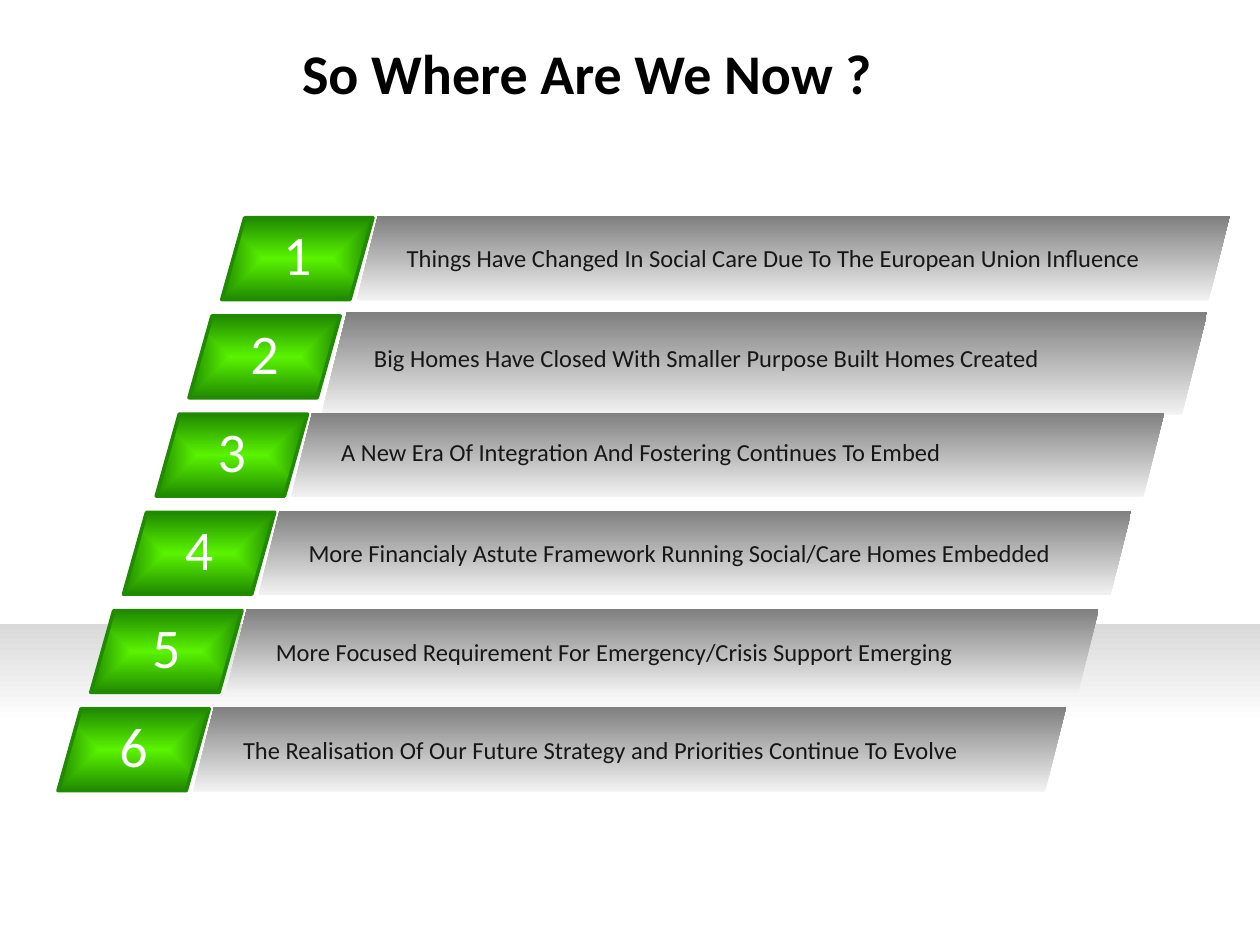
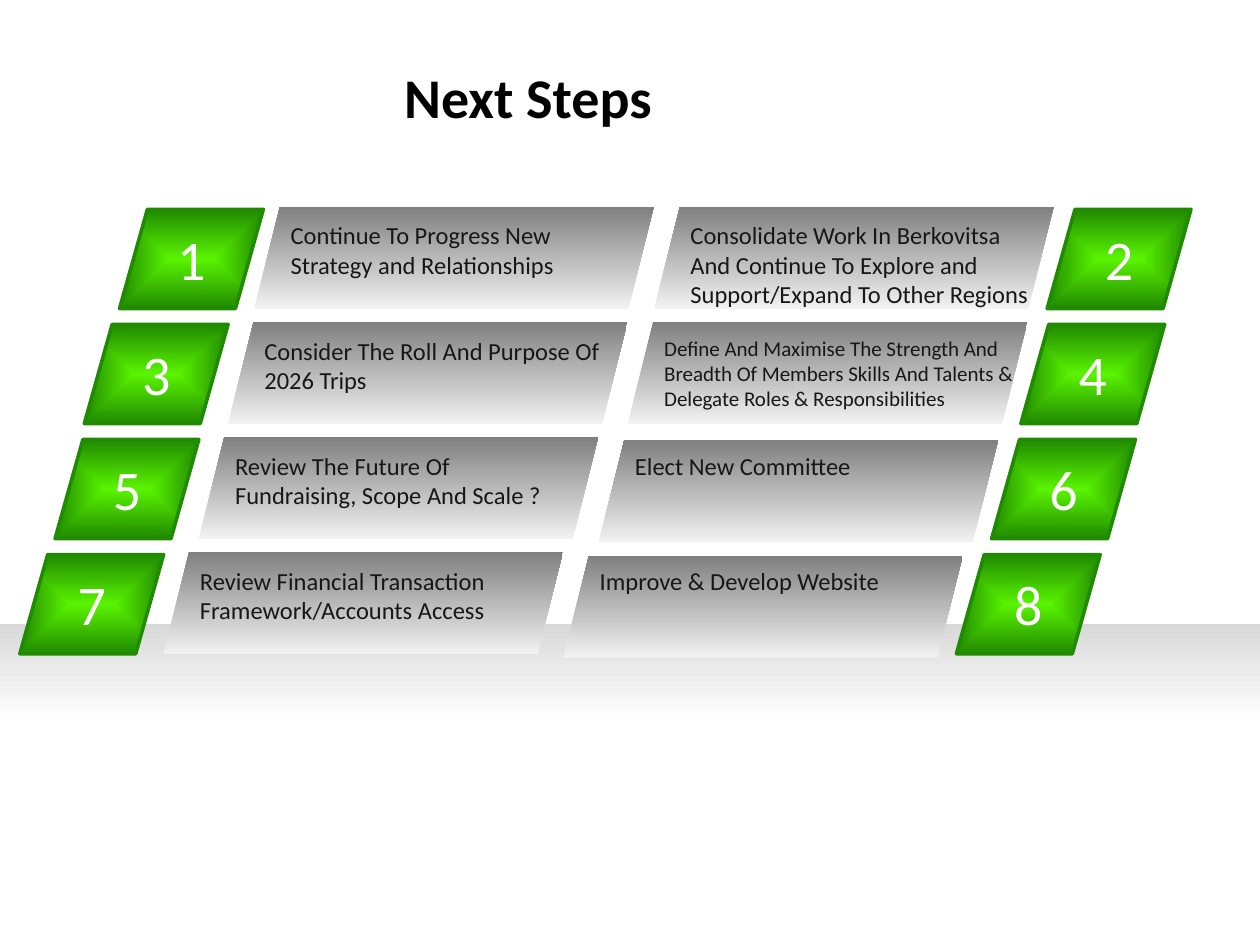
from dataclasses import dataclass

from lxml import etree
from pptx import Presentation
from pptx.dml.color import RGBColor
from pptx.enum.shapes import MSO_SHAPE
from pptx.enum.text import MSO_AUTO_SIZE, PP_ALIGN
from pptx.oxml.ns import qn
from pptx.util import Cm, Pt

RECTANGLE = MSO_SHAPE.RECTANGLE
PARALLELOGRAM = MSO_SHAPE.PARALLELOGRAM
GROW = MSO_AUTO_SIZE.SHAPE_TO_FIT_TEXT
LEFT, CENTER = PP_ALIGN.LEFT, PP_ALIGN.CENTER


@dataclass(frozen=True)
class Theme:
    font: str = "Calibri"
    title_size: int = 32
    body_size: int = 14
    small_size: int = 12
    black: str = "000000"
    white: str = "FFFFFF"
    ink: str = "171717"
    bar_light: str = "F2F2F2"
    bar_dark: str = "808080"
    band: str = "D9D9D9"
    green_light: str = "5AF300"
    green_dark: str = "208A00"


THEME = Theme()


class Deck:
    """Holds the style and the current slide; all lengths are centimetres."""

    def __init__(self, theme):
        self.theme = theme
        self.presentation = Presentation()
        self.presentation.slide_width = Cm(25.4)
        self.presentation.slide_height = Cm(19.05)
        self.slide = None

    def add_slide(self):
        layout = self.presentation.slide_layouts[6]
        self.slide = self.presentation.slides.add_slide(layout)
        band = self.add_shape(self.slide.shapes, RECTANGLE, 0, 12.57, 25.4, 5.13)
        self.fill_gradient(band, self.theme.white, self.theme.band, start=0.61)

    def add_shape(self, shapes, kind, left, top, width, height):
        shape = shapes.add_shape(kind, Cm(left), Cm(top), Cm(width), Cm(height))
        shape.shadow.inherit = False
        shape.line.fill.background()
        return shape

    def fill_gradient(self, shape, first, last, start=0):
        """Vertical gradient that runs from the bottom up."""
        shape.fill.gradient()
        shape.fill.gradient_angle = 90
        stops = shape.fill.gradient_stops
        for stop, color, position in zip(stops, (first, last), (start, 1)):
            stop.color.rgb = RGBColor.from_string(color)
            stop.position = position

    def fill_from_centre(self, shape, inner, outer):
        self.fill_gradient(shape, inner, outer)
        gradient = shape._element.spPr.find(qn("a:gradFill"))
        gradient.remove(gradient.find(qn("a:lin")))
        route = etree.SubElement(gradient, qn("a:path"), {"path": "shape"})
        sides = dict.fromkeys("ltrb", "50000")
        etree.SubElement(route, qn("a:fillToRect"), sides)

    def add_text(self, text, left, top, width, height, size=None, color=None,
                 bold=False, align=LEFT, shapes=None):
        shapes = self.slide.shapes if shapes is None else shapes
        box = shapes.add_textbox(Cm(left), Cm(top), Cm(width), Cm(height))
        frame = box.text_frame
        frame.word_wrap = True
        frame.auto_size = GROW
        frame.text = text
        paragraph = frame.paragraphs[0]
        paragraph.alignment = align
        font = paragraph.runs[0].font
        font.name = self.theme.font
        font.size = Pt(size or self.theme.body_size)
        font.bold = bold
        font.color.rgb = RGBColor.from_string(color or self.theme.ink)

    def add_title(self, text, left, top, width):
        self.add_text(text, left, top, width, 1.63, self.theme.title_size,
                      self.theme.black, bold=True)

    def add_bar(self, left, top, width, height):
        bar = self.add_shape(self.slide.shapes, PARALLELOGRAM,
                             left, top, width, height)
        self.fill_gradient(bar, self.theme.bar_light, self.theme.bar_dark)

    def add_badge(self, number, left, top, width, height, number_shift=0):
        """Green badge grouped with its centred number."""
        shapes = self.slide.shapes.add_group_shape().shapes
        badge = self.add_shape(shapes, PARALLELOGRAM, left, top, width, height)
        badge.adjustments[0] = 0.281
        self.fill_from_centre(badge, self.theme.green_light, self.theme.green_dark)
        badge.line.color.rgb = RGBColor.from_string(self.theme.green_dark)
        badge.line.width = Pt(2)
        box_width, box_height = 1.14, 1.63
        self.add_text(str(number), left + (width - box_width) / 2,
                      top + (height - box_height) / 2 + number_shift,
                      box_width, box_height, self.theme.title_size,
                      self.theme.white, align=CENTER, shapes=shapes)


def build_where_we_are(deck):
    deck.add_slide()
    # Statement, text width, text offset below the badge top
    statements = [
        ("Things Have Changed In Social Care Due To The European Union Influence", 15.45, 0.38),
        ("Big Homes Have Closed With Smaller Purpose Built Homes Created", 16.1, 0.43),
        ("A New Era Of Integration And Fostering Continues To Embed", 15.45, 0.33),
        ("More Financialy Astute Framework Running Social/Care Homes Embedded", 16.4, 0.4),
        ("More Focused Requirement For Emergency/Crisis Support Emerging", 15.5, 0.4),
        ("The Realisation Of Our Future Strategy and Priorities Continue To Evolve", 15.5, 0.4),
    ]
    tall_bars = {2: (6.48, 6.3, 17.86, 2.06)}
    # Staircase of numbered statements
    for number, (text, width, drop) in enumerate(statements, start=1):
        left = 4.47 - 0.66 * (number - 1)
        top = 4.39 + 1.98 * (number - 1)
        deck.add_badge(number, left, top, 3.05, 1.65, number_shift=-0.09)
        deck.add_bar(*tall_bars.get(number, (left + 2.72, top - 0.03, 17.6, 1.7)))
        deck.add_text(text, left + 3.48, top + drop, width, 0.86)
    deck.add_title("So Where Are We Now ?", 5.84, 0.66, 16.5)


def build_next_steps(deck):
    deck.add_slide()
    small = deck.theme.small_size
    # Row left edge, left badge gap, right bar drop, then two steps:
    # text, width, height and optional type size
    rows = [
        (5.13, 2.72, 0,
         ("Continue To Progress New Strategy and Relationships", 7.3, 1.45),
         ("Consolidate Work In Berkovitsa And Continue To Explore and "
          "Support/Expand To Other Regions", 7.62, 2.05)),
        (4.6, 2.9, 0,
         ("Consider The Roll And Purpose Of 2026 Trips", 7.57, 1.45),
         ("Define And Maximise The Strength And Breadth Of Members Skills "
          "And Talents & Delegate Roles & Responsibilities", 7.57, 1.8, small)),
        (4.01, 2.9, 0.07,
         ("Review The Future Of Fundraising, Scope And Scale ?", 7.1, 1.45),
         ("Elect New Committee", 7.3, 0.86)),
        (3.3, 2.9, 0.07,
         ("Review Financial Transaction Framework/Accounts Access", 7.3, 1.45),
         ("Improve & Develop Website", 7.3, 0.86)),
    ]
    column_step = 8.06
    # Two steps per row with badges on the outer sides
    for row, (left, badge_gap, bar_drop, *steps) in enumerate(rows):
        top = 4.17 + 2.32 * row
        badge_lefts = (left - badge_gap, left + 15.98)
        for column, (text, *text_style) in enumerate(steps):
            bar_left = left + column_step * column
            deck.add_bar(bar_left, top + bar_drop * column, 8.05, 2.06)
            deck.add_text(text, bar_left + 0.48, top + 0.15, *text_style)
            deck.add_badge(2 * row + column + 1, badge_lefts[column],
                           top + 0.05, 2.9, 2)
    deck.add_title("Next Steps", 7.9, 1.14, 6.5)


def main():
    deck = Deck(THEME)
    build_where_we_are(deck)
    build_next_steps(deck)
    deck.presentation.save("out.pptx")


if __name__ == "__main__":
    main()
